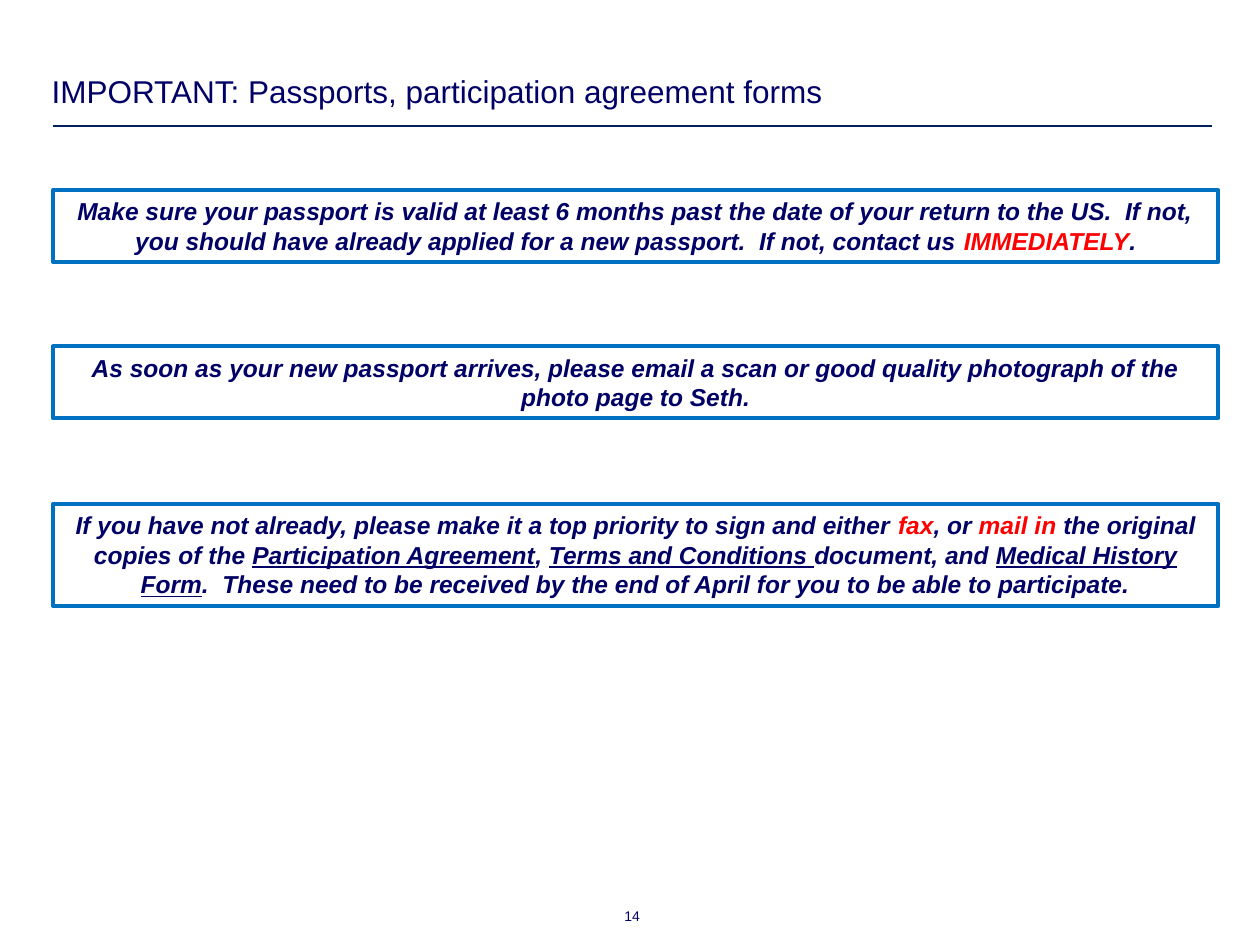
from pptx import Presentation
from pptx.dml.color import RGBColor
from pptx.enum.shapes import MSO_CONNECTOR, MSO_SHAPE
from pptx.enum.text import MSO_ANCHOR, PP_ALIGN
from pptx.oxml.ns import qn
from pptx.util import Inches, Pt
from lxml.etree import SubElement

COLORS = {"navy": "000066", "rule": "002060", "border": "0070C0", "alert": "FF0000"}
TITLE = "IMPORTANT: Passports, participation agreement forms"
PAGE_NUMBER = "14"
NOTICES = [
    (1.51, 0.57, [
        ("Make sure your passport is valid at least 6 months past the date of your return to the US.  "
         "If not, you should have already applied for a new passport.  If not, contact us ", "plain"),
        ("IMMEDIATELY", "alert"),
        (".", "plain"),
    ]),
    (2.75, 0.57, [
        ("As soon as your new passport arrives, please email a scan or good quality photograph "
         "of the photo page to Seth.", "plain"),
    ]),
    (4, 0.81, [
        ("If you have not already, please make it a top priority to sign and either ", "plain"),
        ("fax", "alert"),
        (", or ", "plain"),
        ("mail in", "alert"),
        (" the original copies of the ", "plain"),
        ("Participation Agreement", "underlined"),
        (", ", "plain"),
        ("Terms and Conditions ", "underlined"),
        ("document, and ", "plain"),
        ("Medical History Form", "underlined"),
        (".  These need to be received by the end of April for you to be able to participate.", "plain"),
    ]),
]
LEFT, NOTICE_WIDTH = 0.42, 9.25


def color(name):
    return RGBColor.from_string(COLORS[name])


def style_font(font, size, color_name="navy"):
    font.name = "Arial"
    font.size = Pt(size)
    font.color.rgb = color(color_name)


def set_margins(frame, margin):
    frame.margin_left = frame.margin_right = Inches(margin)
    frame.margin_top = frame.margin_bottom = Inches(margin)


def write_line(frame, text, size, alignment):
    frame.text = text
    frame.word_wrap = True
    para = frame.paragraphs[0]
    para.alignment = alignment
    para.line_spacing = 0.95
    style_font(para.runs[0].font, size)


def add_notice(slide, top, height, spans):
    box = slide.shapes.add_shape(MSO_SHAPE.RECTANGLE, Inches(LEFT), Inches(top),
                                 Inches(NOTICE_WIDTH), Inches(height))
    box.shadow.inherit = False
    box.fill.background()
    box.line.color.rgb = color("border")
    box.line.width = Pt(2.25)
    frame = box.text_frame
    frame.word_wrap = True
    frame.vertical_anchor = MSO_ANCHOR.TOP
    para = frame.paragraphs[0]
    para.alignment = PP_ALIGN.CENTER
    for text, kind in spans:
        span = para.add_run()
        span.text = text
        style_font(span.font, 14, "alert" if kind == "alert" else "navy")
        span.font.bold = span.font.italic = True
        if kind == "underlined":
            span.font.underline = True


def main():
    deck = Presentation()
    deck.slide_width, deck.slide_height = Inches(10), Inches(7.5)
    slide = deck.slides.add_slide(deck.slide_layouts[5])

    title = slide.shapes.title
    title.left, title.top = Inches(0.36), Inches(0.54)
    title.width, title.height = Inches(8.63), Inches(0.39)
    title.text_frame.vertical_anchor = MSO_ANCHOR.BOTTOM
    set_margins(title.text_frame, 0.05)
    write_line(title.text_frame, TITLE, 18, PP_ALIGN.LEFT)

    rule = slide.shapes.add_connector(MSO_CONNECTOR.STRAIGHT, Inches(LEFT), Inches(1),
                                      Inches(9.62), Inches(1))
    rule.line.color.rgb = color("rule")
    rule.line.width = Pt(1.5)
    SubElement(rule.element.spPr, qn("a:effectLst"))

    for top, height, spans in NOTICES:
        add_notice(slide, top, height, spans)

    number = slide.shapes.add_textbox(Inches(4.08), Inches(7.21), Inches(1), Inches(0.13))
    set_margins(number.text_frame, 0)
    write_line(number.text_frame, PAGE_NUMBER, 8, PP_ALIGN.RIGHT)

    deck.save("out.pptx")


if __name__ == "__main__":
    main()
